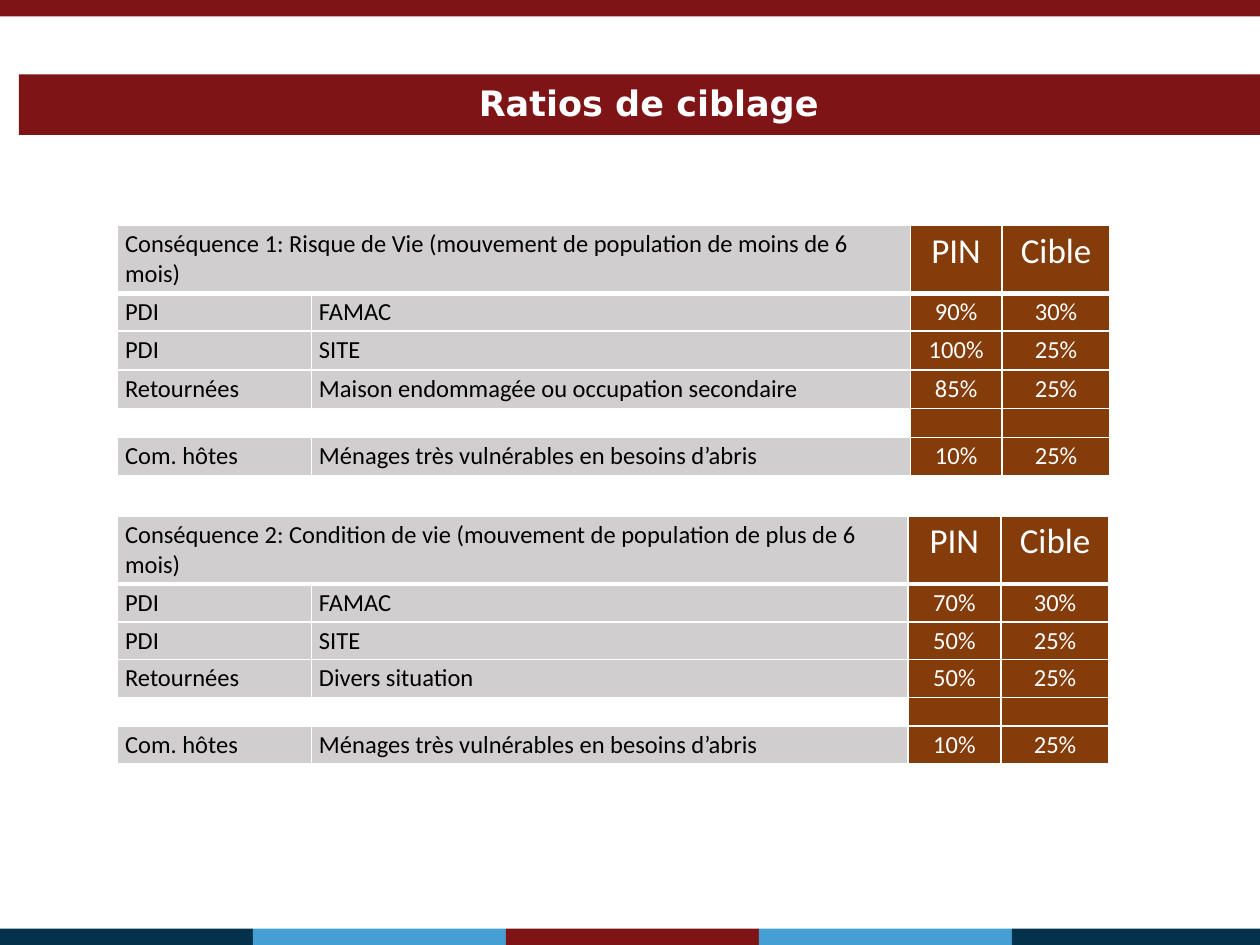
from lxml import etree
from pptx import Presentation
from pptx.dml.color import RGBColor
from pptx.enum.shapes import MSO_SHAPE
from pptx.enum.text import MSO_ANCHOR, PP_ALIGN
from pptx.oxml.ns import qn
from pptx.util import Cm, Pt

RED = RGBColor(0x7F, 0x14, 0x16)
NAVY = RGBColor(0x04, 0x31, 0x4C)
BLUE = RGBColor(0x45, 0x9F, 0xD5)
GREY = RGBColor(0xD0, 0xCE, 0xCE)
BROWN = RGBColor(0x84, 0x3C, 0x0B)
WHITE = RGBColor(0xFF, 0xFF, 0xFF)
BLACK = RGBColor(0, 0, 0)

presentation = Presentation()
presentation.slide_width, presentation.slide_height = Cm(25.4), Cm(19.05)
slide = presentation.slides.add_slide(presentation.slide_layouts[5])


def add_bar(left, top, width, color):
    shape = slide.shapes.add_shape(
        MSO_SHAPE.RECTANGLE, Cm(left), Cm(top), Cm(width), Cm(0.33))
    shape.shadow.inherit = False
    shape.fill.solid()
    shape.fill.fore_color.rgb = color
    shape.line.fill.background()


def add_borders(cell, bottom_width):
    properties = cell._tc.get_or_add_tcPr()
    for side, width in (("L", 1), ("R", 1), ("T", 1), ("B", bottom_width)):
        line = etree.SubElement(properties, qn(f"a:ln{side}"), w=str(Pt(width)))
        fill = etree.SubElement(line, qn("a:solidFill"))
        etree.SubElement(fill, qn("a:srgbClr"), val=str(WHITE))


# Top and bottom bars
add_bar(0, 0, 25.4, RED)
for index, color in enumerate((NAVY, BLUE, RED, BLUE, NAVY)):
    add_bar(index * 5.1, 18.72, 5.1, color)

# Title band
title = slide.shapes.title
title.left, title.top, title.width, title.height = Cm(0.38), Cm(1.5), Cm(25.4), Cm(1.22)
title.fill.solid()
title.fill.fore_color.rgb = RED
title.text_frame.text = "Ratios de ciblage"
title.text_frame.vertical_anchor = MSO_ANCHOR.MIDDLE
paragraph = title.text_frame.paragraphs[0]
paragraph.alignment = PP_ALIGN.CENTER
paragraph.line_spacing = 0.9
font = paragraph.runs[0].font
font.name, font.size, font.bold = "DejaVu Sans", Pt(20), True
font.color.rgb = WHITE

# Ratio tables: top, column widths, body row height, rows
HOSTS = ("Com. hôtes", "Ménages très vulnérables en besoins d’abris", "10%", "25%")
EMPTY = ("", "", "", "")
ratio_tables = [
    (4.55, (3.91, 12.07, 1.85, 2.18), 0.78, [
        ("Conséquence 1: Risque de Vie (mouvement de population de moins de 6 mois)",
         "", "PIN", "Cible"),
        ("PDI", "FAMAC", "90%", "30%"),
        ("PDI", "SITE", "100%", "25%"),
        ("Retournées", "Maison endommagée ou occupation secondaire", "85%", "25%"),
        EMPTY,
        HOSTS,
    ]),
    (10.41, (3.91, 12.02, 1.88, 2.18), 0.74, [
        ("Conséquence 2: Condition de vie (mouvement de population de plus de 6 mois)",
         "", "PIN", "Cible"),
        ("PDI", "FAMAC", "70%", "30%"),
        ("PDI", "SITE", "50%", "25%"),
        ("Retournées", "Divers situation", "50%", "25%"),
        EMPTY,
        HOSTS,
    ]),
]

for top, widths, body_height, rows in ratio_tables:
    heights = (1.35, 0.74, body_height, body_height, 0.58, body_height)
    table = slide.shapes.add_table(
        len(rows), len(widths), Cm(2.37), Cm(top),
        Cm(sum(widths)), Cm(sum(heights))).table
    table.first_row = table.horz_banding = False
    for column, width in zip(table.columns, widths):
        column.width = Cm(width)
    for row, height in zip(table.rows, heights):
        row.height = Cm(height)
    table.cell(0, 0).merge(table.cell(0, 1))

    for row_index, texts in enumerate(rows):
        for column_index, text in enumerate(texts):
            cell = table.cell(row_index, column_index)
            is_ratio = column_index >= 2
            is_header = row_index == 0
            add_borders(cell, 3 if is_header else 1)
            cell.margin_left = cell.margin_right = Cm(0.15)
            cell.margin_top = cell.margin_bottom = Cm(0.08)
            if texts is EMPTY and not is_ratio:
                cell.fill.background()
            else:
                cell.fill.solid()
                cell.fill.fore_color.rgb = BROWN if is_ratio else GREY

            paragraph = cell.text_frame.paragraphs[0]
            if not text:
                # Small end mark keeps the spacer row low
                etree.SubElement(paragraph._p, qn("a:endParaRPr"), sz="900")
                continue
            paragraph.text = text
            paragraph.alignment = PP_ALIGN.CENTER if is_ratio else PP_ALIGN.LEFT
            font = paragraph.runs[0].font
            font.name = "Calibri"
            font.size = Pt(20 if is_header and is_ratio else 14)
            font.color.rgb = WHITE if is_ratio else BLACK

presentation.save("out.pptx")
